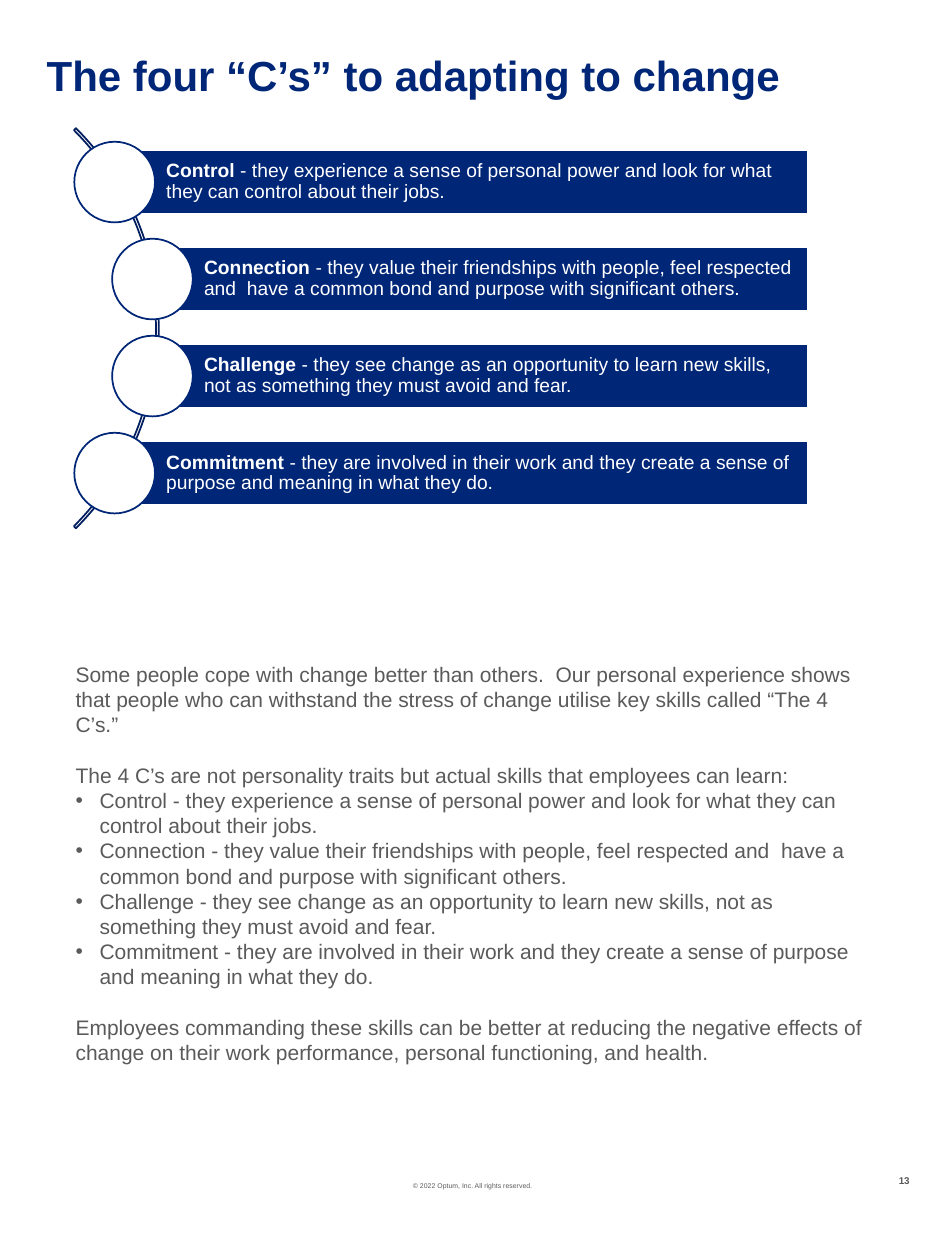
from dataclasses import dataclass

from lxml.etree import SubElement
from pptx import Presentation
from pptx.dml.color import RGBColor
from pptx.enum.shapes import MSO_SHAPE as Shape
from pptx.enum.text import MSO_ANCHOR as Anchor, MSO_AUTO_SIZE as AutoSize, PP_ALIGN as Align
from pptx.oxml.ns import qn
from pptx.util import Inches, Pt

NAVY, DARK_NAVY, GREY, WHITE = "002677", "001E5F", "5A5A5A", "FFFFFF"
BAR_TOP, BAR_STEP, BAR_HEIGHT, BAR_RIGHT = 1.19, 0.77, 0.51, 6.41
CIRCLE = 0.64
BULLET_INDENT = 0.19
BLANK_LINE = Pt(14.4)


@dataclass
class Skill:
    name: str
    meaning: str
    left: float


SKILLS = [
    Skill("Control", "they experience a sense of personal power and look for what "
          "they can control about their jobs.", 0.91),
    Skill("Connection", "they value their friendships with people, feel respected and  "
          "have a common bond and purpose with significant others.", 1.21),
    Skill("Challenge", "they see change as an opportunity to learn new skills, "
          "not as something they must avoid and fear.", 1.21),
    Skill("Commitment", "they are involved in their work and they create a sense of "
          "purpose and meaning in what they do.", 0.91),
]


def color(value: str) -> RGBColor:
    return RGBColor.from_string(value)


def set_font(font, size: float, value: str, bold: bool = False) -> None:
    font.name, font.size, font.bold = "Arial", Pt(size), bold
    font.color.rgb = color(value)


def set_insets(frame, left: float, others: float) -> None:
    frame.margin_left = Inches(left)
    frame.margin_top = frame.margin_right = frame.margin_bottom = Inches(others)


def place(shape, left: float, top: float, width: float, height: float) -> None:
    shape.left, shape.top = Inches(left), Inches(top)
    shape.width, shape.height = Inches(width), Inches(height)


def add_shape(slide, kind, left: float, top: float, width: float, height: float,
              fill: str | None, line: str):
    shape = slide.shapes.add_shape(kind, Inches(left), Inches(top), Inches(width), Inches(height))
    shape.shadow.inherit = False
    if fill:
        shape.fill.solid()
        shape.fill.fore_color.rgb = color(fill)
    else:
        shape.fill.background()
    shape.line.color.rgb = color(line)
    shape.line.width = Pt(1)
    return shape


def add_skill(slide, skill: Skill, top: float) -> None:
    bar = add_shape(slide, Shape.RECTANGLE, skill.left, top, BAR_RIGHT - skill.left, BAR_HEIGHT,
                    NAVY, WHITE)
    frame = bar.text_frame
    frame.word_wrap = True
    frame.vertical_anchor = Anchor.MIDDLE
    set_insets(frame, 0.41, 0.03)
    paragraph = frame.paragraphs[0]
    paragraph.alignment = Align.LEFT
    paragraph.line_spacing = 0.9
    for text, bold in ((skill.name, True), (f" - {skill.meaning}", False)):
        run = paragraph.add_run()
        run.text = text
        set_font(run.font, 11, WHITE, bold)
    # The circle is centred on the bar's left edge
    add_shape(slide, Shape.OVAL, skill.left - CIRCLE / 2, top + (BAR_HEIGHT - CIRCLE) / 2,
              CIRCLE, CIRCLE, WHITE, NAVY)


def add_body_paragraph(frame, text: str, bullet: bool = False, gap: bool = False) -> None:
    first = frame.paragraphs[0]
    paragraph = frame.add_paragraph() if first.text else first
    properties = paragraph._p.get_or_add_pPr()
    indent = Inches(BULLET_INDENT) if bullet else 0
    properties.set("marL", str(indent))
    properties.set("indent", str(-indent))
    if bullet:
        SubElement(properties, qn("a:buFont"), typeface="Arial")
        SubElement(properties, qn("a:buChar"), char="•")
    else:
        SubElement(properties, qn("a:buNone"))
    paragraph.text = text
    paragraph.space_before = BLANK_LINE if gap else Pt(0)
    set_font(paragraph.font, 12, GREY)


def add_footer(slide, text: str, left: float, top: float, width: float, height: float,
               size: float, align, bold: bool = False) -> None:
    box = slide.shapes.add_textbox(Inches(left), Inches(top), Inches(width), Inches(height))
    frame = box.text_frame
    set_insets(frame, 0, 0)
    frame.word_wrap = True
    paragraph = frame.paragraphs[0]
    paragraph.text = text
    paragraph.alignment = align
    set_font(paragraph.font, size, GREY, bold)


def main() -> None:
    deck = Presentation()
    deck.slide_width, deck.slide_height = Inches(7.5), Inches(10)
    slide = deck.slides.add_slide(deck.slide_layouts[1])

    # Title
    title = slide.shapes.title
    place(title, 0.37, 0.44, 6.47, 0.27)
    title.text_frame.auto_size = AutoSize.NONE
    title.text_frame.vertical_anchor = Anchor.TOP
    set_insets(title.text_frame, 0, 0)
    heading = title.text_frame.paragraphs[0]
    heading.text = "The four “C’s” to adapting to change"
    heading.alignment = Align.LEFT
    heading.line_spacing = 0.9
    set_font(heading.font, 24, NAVY, True)

    # Arc behind the four skills
    arc = add_shape(slide, Shape.BLOCK_ARC, -3.23, 0.36, 4.49, 4.49, None, DARK_NAVY)
    for index, value in enumerate((189, 27, 0.005)):
        arc.adjustments[index] = value

    # Skill bars
    for row, skill in enumerate(SKILLS):
        add_skill(slide, skill, BAR_TOP + row * BAR_STEP)

    # Explanation
    body = slide.placeholders[1]
    place(body, 0.5, 5.2, 6.47, 3.33)
    frame = body.text_frame
    frame.auto_size = AutoSize.NONE
    add_body_paragraph(frame, "Some people cope with change better than others.  Our personal "
                       "experience shows that people who can withstand the stress of change "
                       "utilise key skills called “The 4 C’s.”")
    add_body_paragraph(frame, "The 4 C’s are not personality traits but actual skills that "
                       "employees can learn:", gap=True)
    for skill in SKILLS:
        add_body_paragraph(frame, f"{skill.name} - {skill.meaning}", bullet=True)
    add_body_paragraph(frame, "Employees commanding these skills can be better at reducing the "
                       "negative effects of change on their work performance, personal "
                       "functioning, and health.", gap=True)

    # Footer
    add_footer(slide, "© 2022 Optum, Inc. All rights reserved.", 2.89, 9.38, 1.72, 0.07,
               3.9, Align.CENTER)
    add_footer(slide, "13", 7.12, 9.32, 0.1, 0.09, 5.6, Align.RIGHT, True)

    deck.save("out.pptx")


if __name__ == "__main__":
    main()
